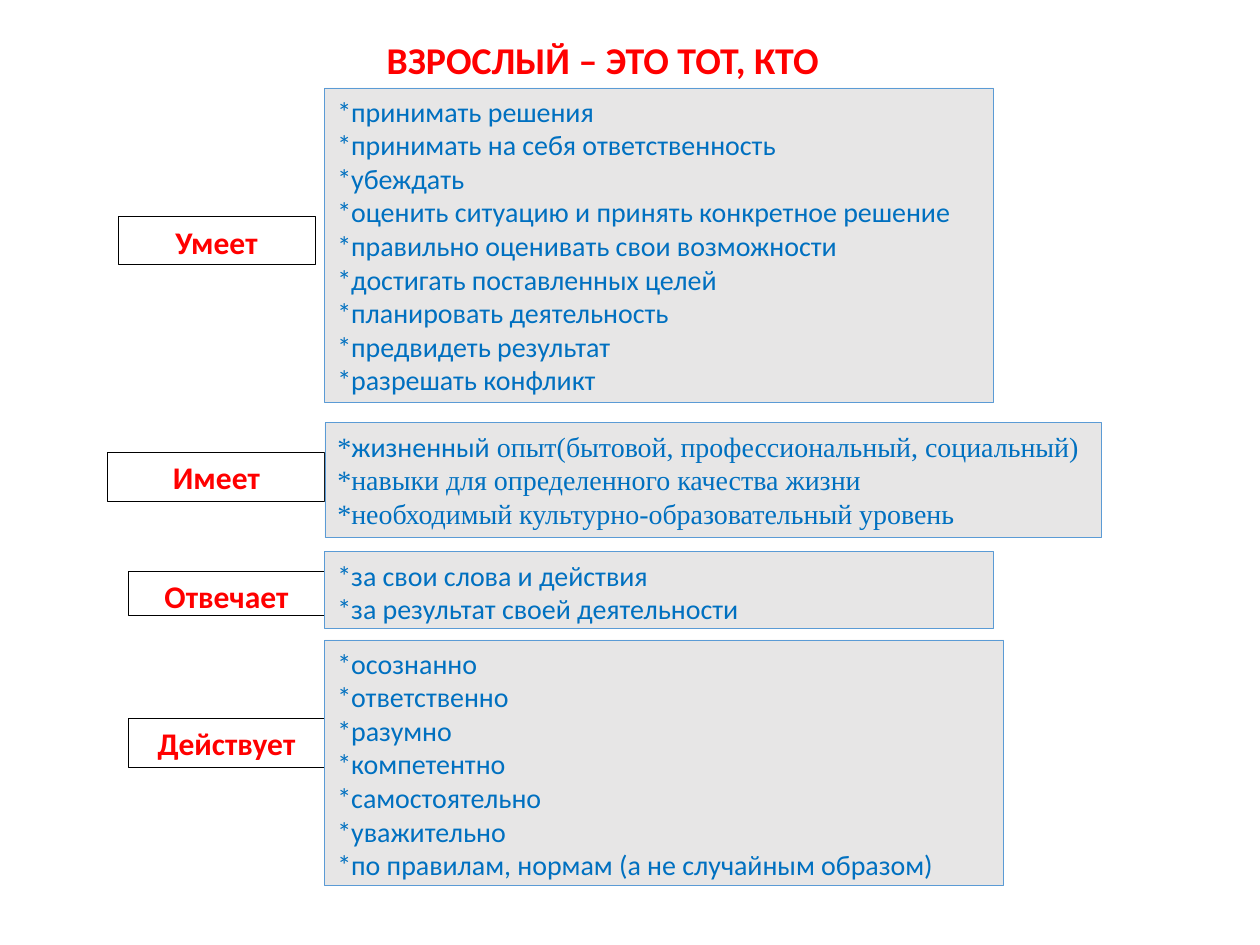
"""Build a slide that lists what makes a person an adult."""
from pptx import Presentation
from pptx import util as u
from pptx.dml.color import RGBColor
from pptx.enum import shapes, text

PX = 914400 // 126
LEFT = 325
SANS, SERIF = "Calibri", "Times New Roman"
HEX = {"red": "FF0000", "blue": "0070C0", "edge": "5B9BD5",
       "grey": "E7E6E6", "white": "FFFFFF", "black": "000000"}

GROUPS = [
    (("Умеет", 118, 217, 197, 48), (88, 669, 315), SANS, [
        "принимать решения", "принимать на себя ответственность", "убеждать",
        "оценить ситуацию и принять конкретное решение",
        "правильно оценивать свои возможности",
        "достигать поставленных целей", "планировать деятельность",
        "предвидеть результат", "разрешать конфликт"]),
    (("Имеет", 108, 452, 217, 50), (423, 777, 115), SERIF, [
        "жизненный| опыт(бытовой, профессиональный, социальный)",
        "навыки для определенного качества жизни",
        "необходимый культурно-образовательный уровень"]),
    (("Отвечает", 128, 571, 197, 45), (552, 669, 77), SANS, [
        "за свои слова и действия", "за результат своей деятельности"]),
    (("Действует", 128, 718, 197, 50), (640, 679, 246), SANS, [
        "осознанно", "ответственно", "разумно", "компетентно",
        "самостоятельно", "уважительно",
        "по правилам, нормам (а не случайным образом)"]),
]


def color(name):
    """Return the named colour."""
    return RGBColor.from_string(HEX[name])


def style(par, size, tint, bold=False, face=SANS):
    """Set the font of a paragraph."""
    font = par.font
    font.size, font.bold, font.name = u.Pt(size), bold, face
    font.color.rgb = color(tint)


def add_box(slide, area, fill, edge):
    """Add a thin-edged rectangle and return its text frame."""
    box = slide.shapes.add_shape(shapes.MSO_SHAPE.RECTANGLE,
                                 *(n * PX for n in area))
    box.shadow.inherit = False
    box.fill.solid()
    box.fill.fore_color.rgb = color(fill)
    box.line.color.rgb = color(edge)
    box.line.width = u.Pt(0.5)
    frame = box.text_frame
    frame.word_wrap = True
    frame.vertical_anchor = text.MSO_ANCHOR.TOP
    return frame


def add_label(slide, word, *area):
    """Add a white box with a centred red word."""
    par = add_box(slide, area, "white", "black").paragraphs[0]
    par.text = word
    par.alignment = text.PP_ALIGN.CENTER
    style(par, 18, "red", True)


def add_list(slide, area, face, items):
    """Add a grey box of starred lines; a bar ends a sans-serif word."""
    frame = add_box(slide, area, "grey", "edge")
    for i, item in enumerate(items):
        par = frame.add_paragraph() if i else frame.paragraphs[0]
        par.alignment = text.PP_ALIGN.LEFT
        par.line_spacing = u.Pt(19.2)
        style(par, 16, "blue", face=face)
        word, bar, rest = item.partition("|")
        if bar:
            par.add_run().text = "*"
            run = par.add_run()
            run.text, run.font.name = word, SANS
            par.add_run().text = rest
        else:
            par.add_run().text = "*" + item


def set_title(slide, words):
    """Place and format the title."""
    title = slide.shapes.title
    title.left, title.top, title.width, title.height = (
        n * PX for n in (374, 38, 581, 91))
    frame = title.text_frame
    frame.word_wrap = True
    frame.vertical_anchor = text.MSO_ANCHOR.TOP
    frame.margin_top = 4 * PX
    par = frame.paragraphs[0]
    par.text = words
    par.alignment = text.PP_ALIGN.LEFT
    par.line_spacing = 0.9
    style(par, 21.6, "red", True)


def main():
    """Build and save the slide."""
    deck = Presentation()
    deck.slide_width, deck.slide_height = 1260 * PX, 945 * PX
    slide = deck.slides.add_slide(deck.slide_layouts[5])
    set_title(slide, "ВЗРОСЛЫЙ – ЭТО ТОТ, КТО")
    for label, (top, width, height), face, items in GROUPS:
        add_label(slide, *label)
        add_list(slide, (LEFT, top, width, height), face, items)
    deck.save("out.pptx")


if __name__ == "__main__":
    main()
